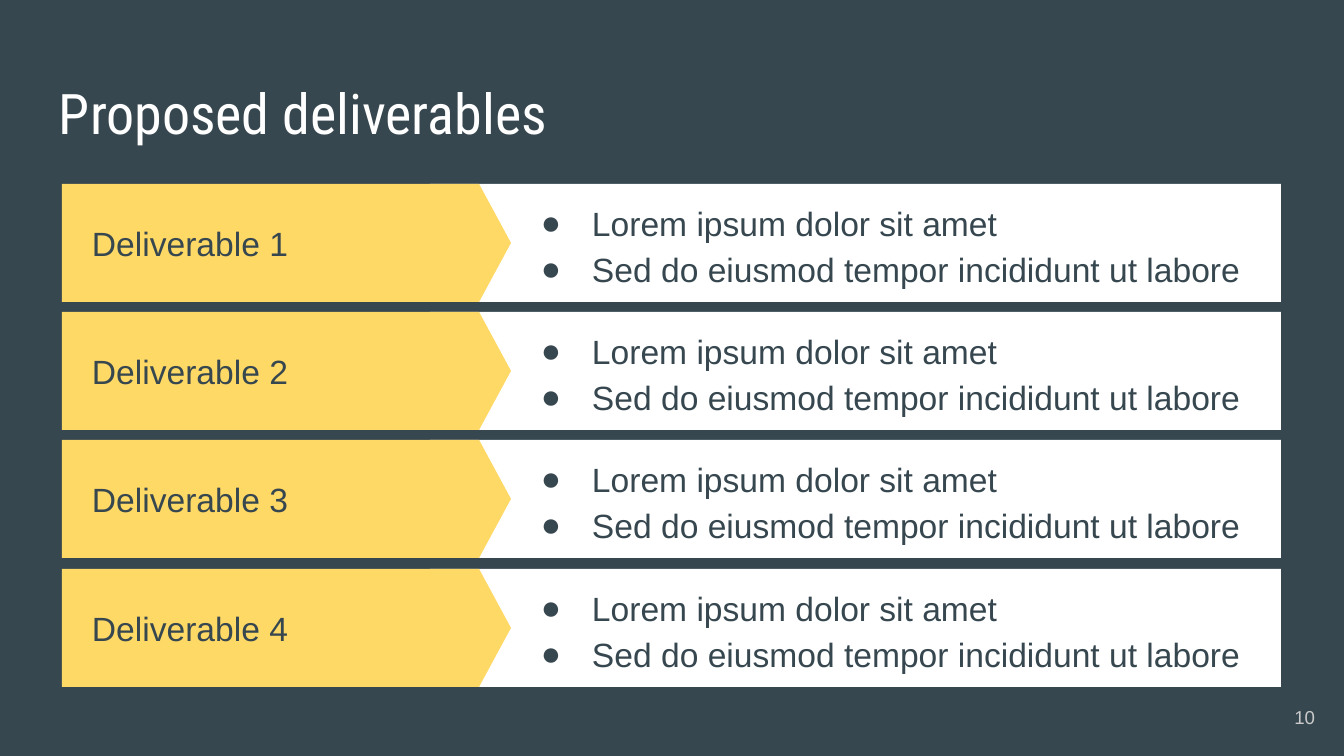
from dataclasses import dataclass

from lxml.etree import SubElement
from pptx import Presentation
from pptx.dml.color import RGBColor
from pptx.enum.shapes import MSO_SHAPE as Shape
from pptx.enum.text import MSO_ANCHOR as Anchor, MSO_AUTO_SIZE as AutoSize, PP_ALIGN as Align
from pptx.oxml.ns import qn
from pptx.util import Emu, Pt


@dataclass(frozen=True)
class Theme:
    slate: str = "37474F"
    yellow: str = "FFD966"
    white: str = "FFFFFF"
    grey: str = "CACACA"
    heading_font: str = "Roboto Condensed"
    body_font: str = "Arial"
    title_size: int = 30
    body_size: int = 18
    number_size: int = 10


theme = Theme()
EMU_PER_PX = 914400 / 134.4
INSET = 13
ROWS = 4
FIRST_TOP, LAST_TOP, ROW_HEIGHT = 184, 569, 118
BULLETS = ["Lorem ipsum dolor sit amet", "Sed do eiusmod tempor incididunt ut labore"]


def px(*lengths):
    return [Emu(round(length * EMU_PER_PX)) for length in lengths]


def write(shape, box, lines, size, color, font=theme.body_font, anchor=Anchor.MIDDLE, align=Align.LEFT):
    """Place a text shape, fill it with lines and format every run."""
    shape.left, shape.top, shape.width, shape.height = px(*box)
    frame = shape.text_frame
    frame.text = "\n".join(lines)
    frame.word_wrap = True
    frame.auto_size = AutoSize.NONE
    frame.vertical_anchor = anchor
    frame.margin_left, frame.margin_top, frame.margin_right, frame.margin_bottom = px(*[INSET] * 4)
    for paragraph in frame.paragraphs:
        paragraph.alignment = align
        paragraph.space_before = Pt(0)
        for run in paragraph.runs:
            run.font.name = font
            run.font.size = Pt(size)
            run.font.bold = False
            run.font.color.rgb = RGBColor.from_string(color)


# Slide and background
presentation = Presentation()
presentation.slide_width, presentation.slide_height = px(1344, 756)
slide = presentation.slides.add_slide(presentation.slide_layouts.get_by_name("Comparison"))
slide.background.fill.solid()
slide.background.fill.fore_color.rgb = RGBColor.from_string(theme.slate)
shapes = slide.shapes

# Title
title, *lists = slide.placeholders
write(title, (46, 66, 1252, 85), ["Proposed deliverables"], theme.title_size, theme.white,
      font=theme.heading_font, anchor=Anchor.TOP)

# One row per deliverable
for row, list_body in enumerate(lists[:ROWS]):
    top = FIRST_TOP + (LAST_TOP - FIRST_TOP) * row // (ROWS - 1)

    # White panel with the yellow arrow over its left end
    for kind, left, width, color in [(Shape.RECTANGLE, 430, 851, theme.white),
                                     (Shape.PENTAGON, 62, 449, theme.yellow)]:
        bar = shapes.add_shape(kind, *px(left, top, width, ROW_HEIGHT))
        bar.shadow.inherit = False
        bar.fill.solid()
        bar.fill.fore_color.rgb = RGBColor.from_string(color)
        bar.line.fill.background()
    bar.adjustments[0] = 0.27

    # Label on the arrow
    label = shapes.add_textbox(0, 0, 0, 0)
    write(label, (79, top, 356, ROW_HEIGHT), [f"Deliverable {row + 1}"], theme.body_size, theme.slate)

    # Bulleted list, brought in front of the panel
    label.element.addnext(list_body.element)
    write(list_body, (512, top, 751, ROW_HEIGHT), BULLETS, theme.body_size, theme.slate)
    for paragraph in list_body.text_frame.paragraphs:
        paragraph.line_spacing = 1.15
        properties = paragraph._p.get_or_add_pPr()
        indent, hanging = px(67, -51)
        properties.set("marL", str(indent))
        properties.set("indent", str(hanging))
        bullet_color = SubElement(properties, qn("a:buClr"))
        SubElement(bullet_color, qn("a:srgbClr"), val=theme.slate)
        SubElement(properties, qn("a:buFont"), typeface=theme.body_font)
        SubElement(properties, qn("a:buChar"), char="●")

# Slide number
write(shapes.add_textbox(0, 0, 0, 0), (1248, 688, 80, 58), ["10"], theme.number_size, theme.grey,
      align=Align.RIGHT)

presentation.save("out.pptx")
